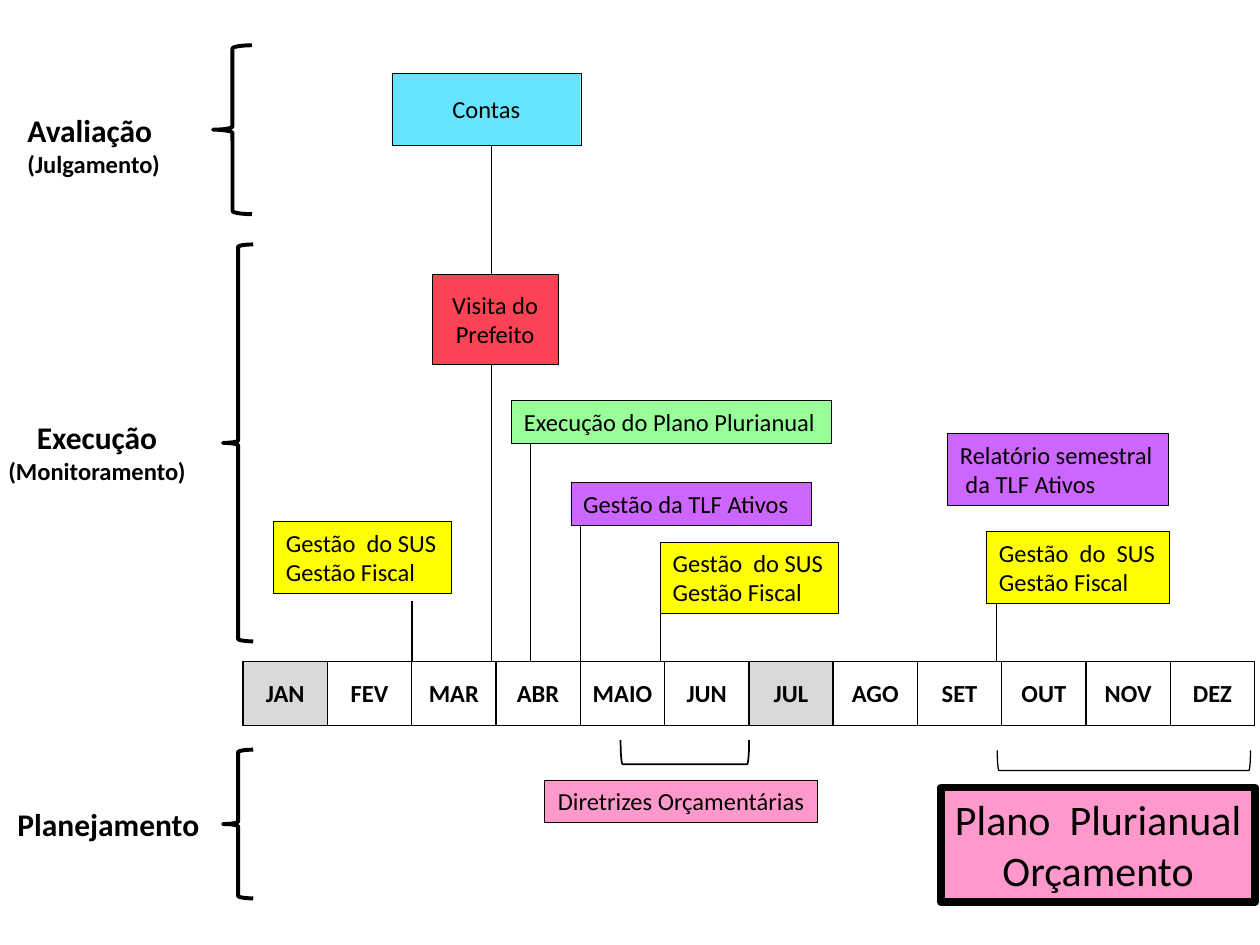
from lxml import etree
from pptx import Presentation
from pptx.dml.color import RGBColor
from pptx.enum.shapes import MSO_CONNECTOR, MSO_SHAPE
from pptx.enum.text import MSO_ANCHOR, MSO_AUTO_SIZE, PP_ALIGN
from pptx.oxml import parse_xml
from pptx.oxml.ns import nsdecls, qn
from pptx.util import Inches, Pt

LEFT, CENTER = PP_ALIGN.LEFT, PP_ALIGN.CENTER
TOP, MIDDLE = MSO_ANCHOR.TOP, MSO_ANCHOR.MIDDLE
BLACK, WHITE, GRAY = "000000", "FFFFFF", "D9D9D9"
YELLOW, PURPLE, PINK = "FFFF00", "CC66FF", "FF99CC"
CYAN, RED, GREEN = "67E4FD", "FB4355", "99FF99"


def color(hex_code):
    return RGBColor.from_string(hex_code)


def write(frame, text, sizes, align, bold=False):
    """Fill a text frame; sizes holds one point size per paragraph."""
    frame.text = text
    for para, size in zip(frame.paragraphs, sizes):
        para.alignment = align
        for span in para.runs:
            span.font.name = "Calibri"
            span.font.size = Pt(size)
            span.font.bold = bold
            span.font.color.rgb = color(BLACK)


deck = Presentation()
deck.slide_width, deck.slide_height = Inches(10), Inches(7.5)
page = deck.slides.add_slide(deck.slide_layouts[6])
shapes = page.shapes

# Month calendar
months = "JAN FEV MAR ABR MAIO JUN JUL AGO SET OUT NOV DEZ".split()
calendar = shapes.add_table(1, len(months), Inches(1.93), Inches(5.25),
                            Inches(8.03), Inches(0.51)).table
calendar.rows[0].height = Inches(0.51)
for column, month in enumerate(months):
    calendar.columns[column].width = Inches(8.03 / len(months))
    cell = calendar.cell(0, column)
    cell.margin_left = cell.margin_right = cell.margin_top = cell.margin_bottom = 0
    cell.vertical_anchor = MIDDLE
    write(cell.text_frame, month, [14], CENTER, bold=True)
    for side in ("lnL", "lnR", "lnT", "lnB"):
        cell._tc.get_or_add_tcPr().append(parse_xml(
            f'<a:{side} {nsdecls("a")} w="12700"><a:solidFill>'
            f'<a:srgbClr val="{BLACK}"/></a:solidFill></a:{side}>'))
    cell.fill.solid()
    cell.fill.fore_color.rgb = color(GRAY if month in ("JAN", "JUL") else WHITE)

# Phase labels: left, top, width, height, text, sizes, alignment
phases = [
    (0.12, 0.83, 1.26, 0.64, "Avaliação\n(Julgamento)", [18, 14], LEFT),
    (-0.04, 3.27, 1.62, 0.64, "Execução\n(Monitoramento)", [18, 14], CENTER),
    (0.04, 6.34, 1.66, 0.4, "Planejamento", [18], LEFT),
]
for left, top, width, height, text, sizes, align in phases:
    label = shapes.add_textbox(Inches(left), Inches(top), Inches(width), Inches(height))
    write(label.text_frame, text, sizes, align, bold=True)
    label.text_frame.word_wrap = False
    label.text_frame.auto_size = MSO_AUTO_SIZE.SHAPE_TO_FIT_TEXT

# Phase braces and period brackets: kind, left, top, width, height, rotation, line
BRACE, BRACKET = MSO_SHAPE.LEFT_BRACE, MSO_SHAPE.LEFT_BRACKET
spans = [
    (BRACE, 1.69, 0.36, 0.31, 1.34, 0, 2.25),
    (BRACE, 1.77, 1.94, 0.24, 3.15, 0, 2.25),
    (BRACE, 1.77, 5.95, 0.24, 1.18, 0, 2.25),
    (BRACKET, 5.34, 5.46, 0.19, 1.02, 270, 1),
    (BRACKET, 8.84, 5.03, 0.16, 2.01, 270, 0.75),
]
for kind, left, top, width, height, rotation, weight in spans:
    brace = shapes.add_shape(kind, Inches(left), Inches(top), Inches(width), Inches(height))
    brace.shadow.inherit = False
    brace.rotation = rotation
    brace.fill.background()
    brace.line.color.rgb = color(BLACK)
    brace.line.width = Pt(weight)

# Stems from the calendar up to the events: x, bottom, top, line
stems = [
    (3.9, 5.25, 1.15, 0.25),
    (3.27, 5.25, 4.77, 0.75),
    (4.21, 5.25, 3.51, 0.75),
    (4.61, 5.32, 4.14, 0.75),
    (5.24, 5.25, 4.77, 0.75),
    (7.91, 5.25, 4.77, 0.75),
]
for x, bottom, top, weight in stems:
    stem = shapes.add_connector(MSO_CONNECTOR.STRAIGHT, Inches(x), Inches(bottom),
                                Inches(x), Inches(top))
    stem.line.color.rgb = color(BLACK)
    stem.line.width = Pt(weight)
    etree.SubElement(stem._element.spPr, qn("a:effectLst"))

# Events: left, top, width, height, fill, text, size, alignment, anchor, line
events = [
    (3.11, 0.58, 1.5, 0.57, CYAN, "Contas", 14, CENTER, MIDDLE, 0.25),
    (3.43, 2.18, 1, 0.71, RED, "Visita do\nPrefeito", 14, CENTER, MIDDLE, 0.25),
    (4.06, 3.18, 2.54, 0.34, GREEN, "Execução do Plano Plurianual", 14, LEFT, TOP, 0.25),
    (4.53, 3.83, 1.91, 0.34, PURPLE, "Gestão da TLF Ativos", 14, LEFT, TOP, 0.25),
    (7.52, 3.44, 1.75, 0.57, PURPLE, "Relatório semestral\n da TLF Ativos", 14, LEFT, TOP, 0.25),
    (2.17, 4.14, 1.41, 0.57, YELLOW, "Gestão  do SUS\nGestão Fiscal", 14, LEFT, TOP, 0.25),
    (5.24, 4.3, 1.41, 0.57, YELLOW, "Gestão  do SUS\nGestão Fiscal", 14, LEFT, TOP, 0.25),
    (7.83, 4.22, 1.45, 0.57, YELLOW, "Gestão  do  SUS\nGestão Fiscal", 14, LEFT, TOP, 0.25),
    (4.32, 6.19, 2.17, 0.34, PINK, "Diretrizes Orçamentárias", 14, CENTER, TOP, 0.25),
    (7.47, 6.25, 2.49, 0.91, PINK, "Plano  Plurianual\nOrçamento", 24, CENTER, TOP, 4.5),
]
for left, top, width, height, fill, text, size, align, anchor, weight in events:
    box = shapes.add_shape(MSO_SHAPE.RECTANGLE, Inches(left), Inches(top),
                           Inches(width), Inches(height))
    box.shadow.inherit = False
    box.fill.solid()
    box.fill.fore_color.rgb = color(fill)
    box.line.color.rgb = color(BLACK)
    box.line.width = Pt(weight)
    frame = box.text_frame
    write(frame, text, [size] * 2, align)
    frame.vertical_anchor = anchor
    frame.word_wrap = anchor == MIDDLE
    if anchor == TOP:
        frame.auto_size = MSO_AUTO_SIZE.SHAPE_TO_FIT_TEXT

deck.save("out.pptx")
